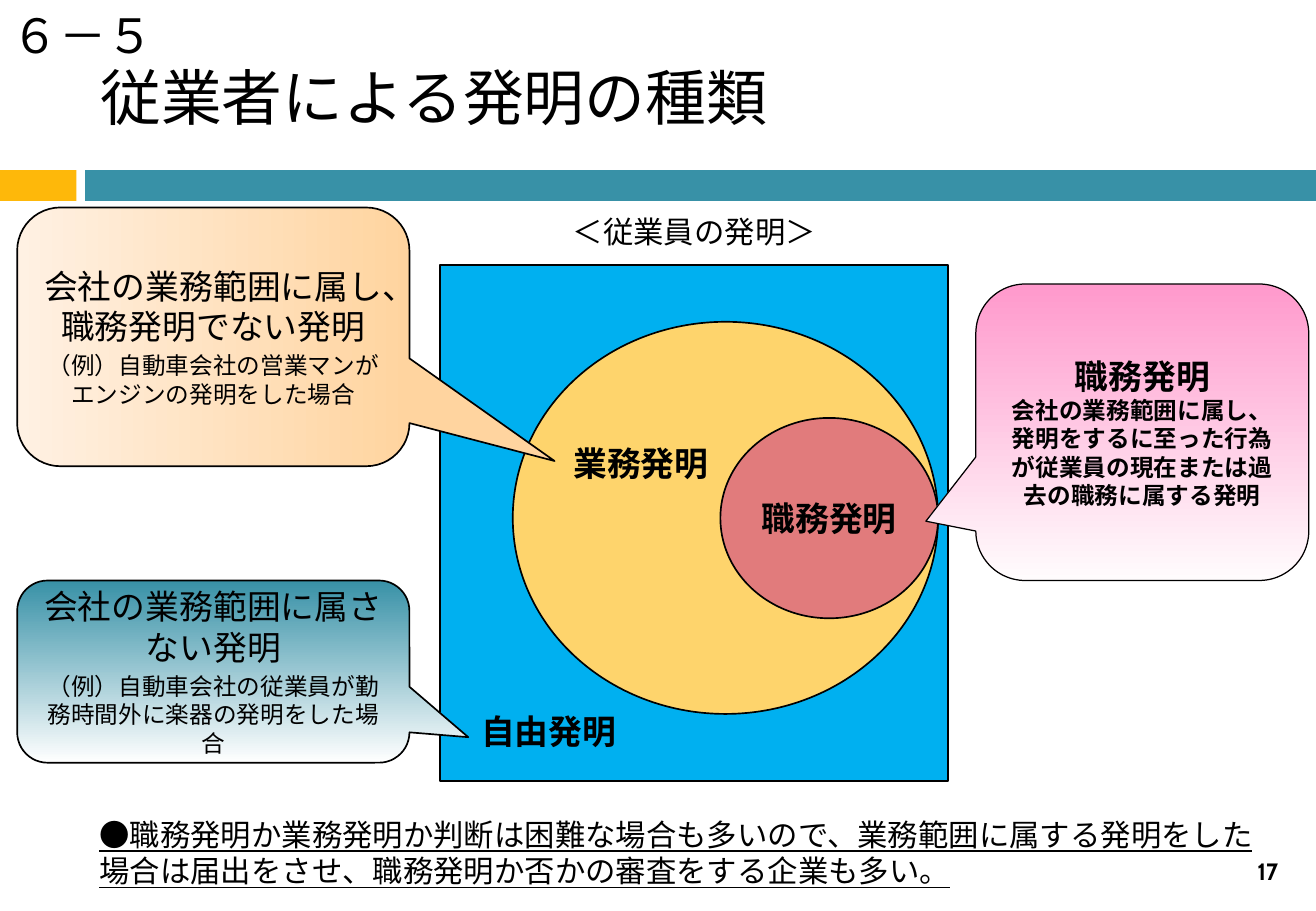
from pptx import Presentation
from pptx.dml.color import RGBColor
from pptx.enum.shapes import MSO_SHAPE as SHAPE
from pptx.enum.text import MSO_ANCHOR as ANCHOR, PP_ALIGN as ALIGN
from pptx.oxml.ns import qn
from pptx.util import Cm, Pt
from lxml import etree

COLORS = {
    "black": "000000", "white": "FFFFFF", "amber": "FEB80A", "teal": "3891A7",
    "blue": "00B0F0", "yellow": "FED46C", "red": "E17B7C",
    "pink": "FF99CC", "pale_pink": "FFFCFD", "orange": "FFD49F", "pale_orange": "FFF1E3",
}
JP_FONT = "Noto Sans CJK JP"
LATIN_FONT = "Cabin"


def rgb(name):
    return RGBColor.from_string(COLORS[name])


def write_text(sp, paragraphs, bold=False, underline=False, font=JP_FONT,
               align=ALIGN.CENTER, anchor=ANCHOR.TOP, wrap=True, gap=0):
    """Write (text, size) paragraphs; gap is the space between them as a share of the size."""
    tf = sp.text_frame
    tf.word_wrap = wrap
    tf.vertical_anchor = anchor
    for i, (text, size) in enumerate(paragraphs):
        p = tf.add_paragraph() if i else tf.paragraphs[0]
        p.alignment = align
        if i:
            p.space_before = Pt(gap * size)
        r = p.add_run()
        r.text = text
        r.font.size = Pt(size)
        r.font.bold = bold
        r.font.underline = underline
        r.font.color.rgb = rgb("black")
        r.font.name = font
        ea = etree.SubElement(r.font._element, qn("a:ea"))
        ea.set("typeface", JP_FONT)


def add_label(s, box, text, size, **fmt):
    sp = s.shapes.add_textbox(*map(Cm, box))
    write_text(sp, [(text, size)], **fmt)


def add_figure(s, kind, box, fill=None, line=1):
    sp = s.shapes.add_shape(kind, *map(Cm, box))
    sp.shadow.inherit = False
    if fill:
        sp.fill.solid()
        sp.fill.fore_color.rgb = rgb(fill)
    if line:
        sp.line.color.rgb = rgb("black")
        sp.line.width = Pt(line)
    else:
        sp.line.fill.background()
    return sp


def add_callout(s, box, tip, gradient, paragraphs, angle=270, line=1, **fmt):
    """Add a rounded callout; tip is the pointer's offset from the centre, by width and height."""
    sp = add_figure(s, SHAPE.ROUNDED_RECTANGULAR_CALLOUT, box, line=line)
    sp.adjustments[0], sp.adjustments[1] = tip
    sp.fill.gradient()
    sp.fill.gradient_angle = angle
    for stop, position, color in zip(sp.fill.gradient_stops, (0, 1), gradient):
        stop.position = position
        stop.color.rgb = rgb(color)
    write_text(sp, paragraphs, anchor=ANCHOR.MIDDLE, **fmt)


def add_header(s):
    add_figure(s, SHAPE.RECTANGLE, (0, 3.56, 1.6, 0.64), "amber", line=0)
    add_figure(s, SHAPE.RECTANGLE, (1.78, 3.56, 25.73, 0.64), "teal", line=0)
    add_label(s, (1.85, 0.64, 24.54, 2.74), "従業者による発明の種類", 36,
              align=ALIGN.LEFT, anchor=ANCHOR.MIDDLE)
    add_label(s, (0, 0, 3.99, 1.45), "６－５", 28, align=ALIGN.LEFT)


def add_invention_sets(s):
    add_label(s, (11.58, 4.34, 5.87, 1.02), "＜従業員の発明＞", 18, font=LATIN_FONT)
    add_figure(s, SHAPE.RECTANGLE, (9.2, 5.54, 10.62, 10.8), "blue")
    add_figure(s, SHAPE.OVAL, (10.72, 6.73, 8.89, 8.2), "yellow")
    duty = add_figure(s, SHAPE.OVAL, (15.06, 8.74, 4.55, 4.19), "red")
    write_text(duty, [("職務発明", 20)], bold=True, anchor=ANCHOR.MIDDLE, wrap=False)
    for left, top, text in ((11.71, 9.14, "業務発明"), (9.78, 14.73, "自由発明")):
        add_label(s, (left, top, 3.38, 1.12), text, 20, bold=True, wrap=False)


def add_explanations(s):
    add_callout(s, (20.4, 5.94, 6.96, 6.2), (-0.65, 0.3), ("pink", "pale_pink"),
                [("職務発明", 20), ("会社の業務範囲に属し、", 14),
                 ("発明をするに至った行為が従業員の現在または過去の職務に属する発明", 14)],
                line=0.75, bold=True)
    add_callout(s, (0.36, 4.34, 8.2, 5.41), (0.87, 0.48), ("orange", "pale_orange"),
                [("会社の業務範囲に属し、職務発明でない発明", 20),
                 ("（例）自動車会社の営業マンがエンジンの発明をした場合", 14)],
                angle=180, gap=0.2)
    add_callout(s, (0.36, 12.14, 8.2, 3.81), (0.65, 0.36), ("teal", "white"),
                [("会社の業務範囲に属さない発明", 20),
                 ("（例）自動車会社の従業員が勤務時間外に楽器の発明をした場合", 14)],
                gap=0.2)


def add_footer(s):
    add_label(s, (1.83, 16.94, 24.64, 1.78),
              "●職務発明か業務発明か判断は困難な場合も多いので、業務範囲に属する発明をした"
              "場合は届出をさせ、職務発明か否かの審査をする企業も多い。",
              18, underline=True, align=ALIGN.LEFT)
    add_label(s, (25.25, 17.68, 2.51, 1.07), "17", 14, bold=True, font=LATIN_FONT,
              anchor=ANCHOR.MIDDLE)


def main():
    prs = Presentation()
    prs.slide_width, prs.slide_height = Cm(27.51), Cm(19.05)
    s = prs.slides.add_slide(prs.slide_layouts[6])
    add_header(s)
    add_invention_sets(s)
    add_explanations(s)
    add_footer(s)
    prs.save("out.pptx")


if __name__ == "__main__":
    main()
